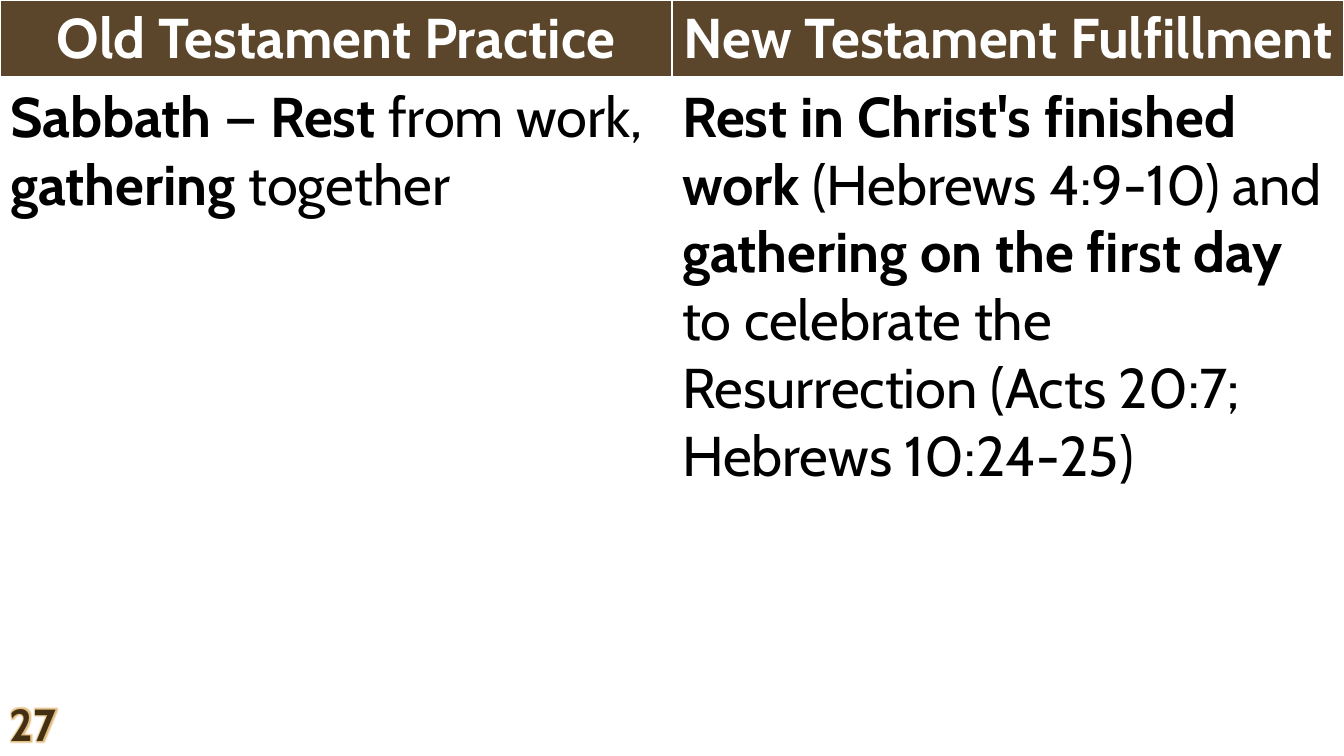
from lxml import etree
from pptx import Presentation
from pptx.dml.color import RGBColor
from pptx.enum.text import MSO_ANCHOR, PP_ALIGN
from pptx.oxml.ns import qn
from pptx.util import Cm, Pt

CENTER, LEFT = PP_ALIGN.CENTER, PP_ALIGN.LEFT
BOTTOM = MSO_ANCHOR.BOTTOM
BLANK_LAYOUT = 6

WHITE = RGBColor(0xFF, 0xFF, 0xFF)
BLACK = RGBColor(0x00, 0x00, 0x00)
BROWN = RGBColor(0x5B, 0x46, 0x2B)
DARK_BROWN = RGBColor(0x43, 0x2F, 0x11)
TAN = RGBColor(0xE3, 0xBE, 0x82)

PAGE_WIDTH, PAGE_HEIGHT = Cm(33.87), Cm(19.05)
HEADER_HEIGHT, BODY_HEIGHT = Cm(1.97), Cm(17.16)

# Each cell is a list of (text, bold) spans.
HEADERS = [
    [("Old Testament Practice", True)],
    [("New Testament Fulfillment", True)],
]
PRACTICES = [
    [("Sabbath", True), (" — ", False), ("Rest", True),
     (" from work, ", False), ("gathering", True), (" together", False)],
    [("Rest in Christ's finished work ", True),
     ("(Hebrews 4:9-10) and ", False),
     ("gathering on the first day ", True),
     ("to celebrate the Resurrection (Acts 20:7; Hebrews 10:24-25)", False)],
]


def add_span(para, text, color, **font_values):
    span = para.add_run()
    span.text = text
    for name, value in {"name": "Cabin", **font_values}.items():
        setattr(span.font, name, value)
    span.font.color.rgb = color
    return span


def add_color(parent, color):
    fill = etree.SubElement(parent, qn("a:solidFill"))
    etree.SubElement(fill, qn("a:srgbClr"), val=str(color))


def set_borders(cell, widths):
    """Draw white borders; widths maps the sides L, R, T, B to points."""
    properties = cell._tc.get_or_add_tcPr()
    for index, (side, width) in enumerate(widths.items()):
        line = etree.Element(qn(f"a:ln{side}"), w=str(Pt(width)))
        add_color(line, WHITE)
        properties.insert(index, line)


def add_glow(span, color, radius):
    effects = etree.Element(qn("a:effectLst"))
    glow = etree.SubElement(effects, qn("a:glow"), rad=str(radius))
    etree.SubElement(glow, qn("a:srgbClr"), val=str(color))
    span.font._element.find(qn("a:solidFill")).addnext(effects)


def add_comparison(page, left, top, width, height):
    table = page.shapes.add_table(2, 2, left, top, width, height).table
    for column in table.columns:
        column.width = width // 2
    rows = [
        (HEADERS, HEADER_HEIGHT, CENTER, WHITE, BROWN, {"T": 1, "B": 3}),
        (PRACTICES, BODY_HEIGHT, LEFT, BLACK, None, {"T": 3, "B": 1}),
    ]
    for row, (texts, row_height, align, color, fill, edges) in zip(table.rows, rows):
        row.height = row_height
        for cell, spans in zip(row.cells, texts):
            if fill is None:
                cell.fill.background()
            else:
                cell.fill.solid()
                cell.fill.fore_color.rgb = fill
            set_borders(cell, {"L": 1, "R": 1, **edges})
            para = cell.text_frame.paragraphs[0]
            para.alignment = align
            for text, bold in spans:
                add_span(para, text, color, size=Pt(40), bold=bold)


def add_page_number(page, number, left, top, width, height):
    frame = page.shapes.add_textbox(left, top, width, height).text_frame
    frame.word_wrap = True
    frame.vertical_anchor = BOTTOM
    para = frame.paragraphs[0]
    for name, value in {"line_spacing": 0.9, "space_after": Pt(18)}.items():
        setattr(para, name, value)
    span = add_span(para, number, DARK_BROWN, size=Pt(32), bold=True)
    add_glow(span, TAN, Pt(5))


def main():
    deck = Presentation()
    deck.slide_width, deck.slide_height = PAGE_WIDTH, PAGE_HEIGHT
    page = deck.slides.add_slide(deck.slide_layouts[BLANK_LAYOUT])
    add_comparison(page, 0, 0, PAGE_WIDTH, HEADER_HEIGHT + BODY_HEIGHT)
    number_height = Cm(1.9)
    add_page_number(page, "27", 0, PAGE_HEIGHT - number_height,
                    Cm(1.78), number_height)
    deck.save("out.pptx")


if __name__ == "__main__":
    main()
